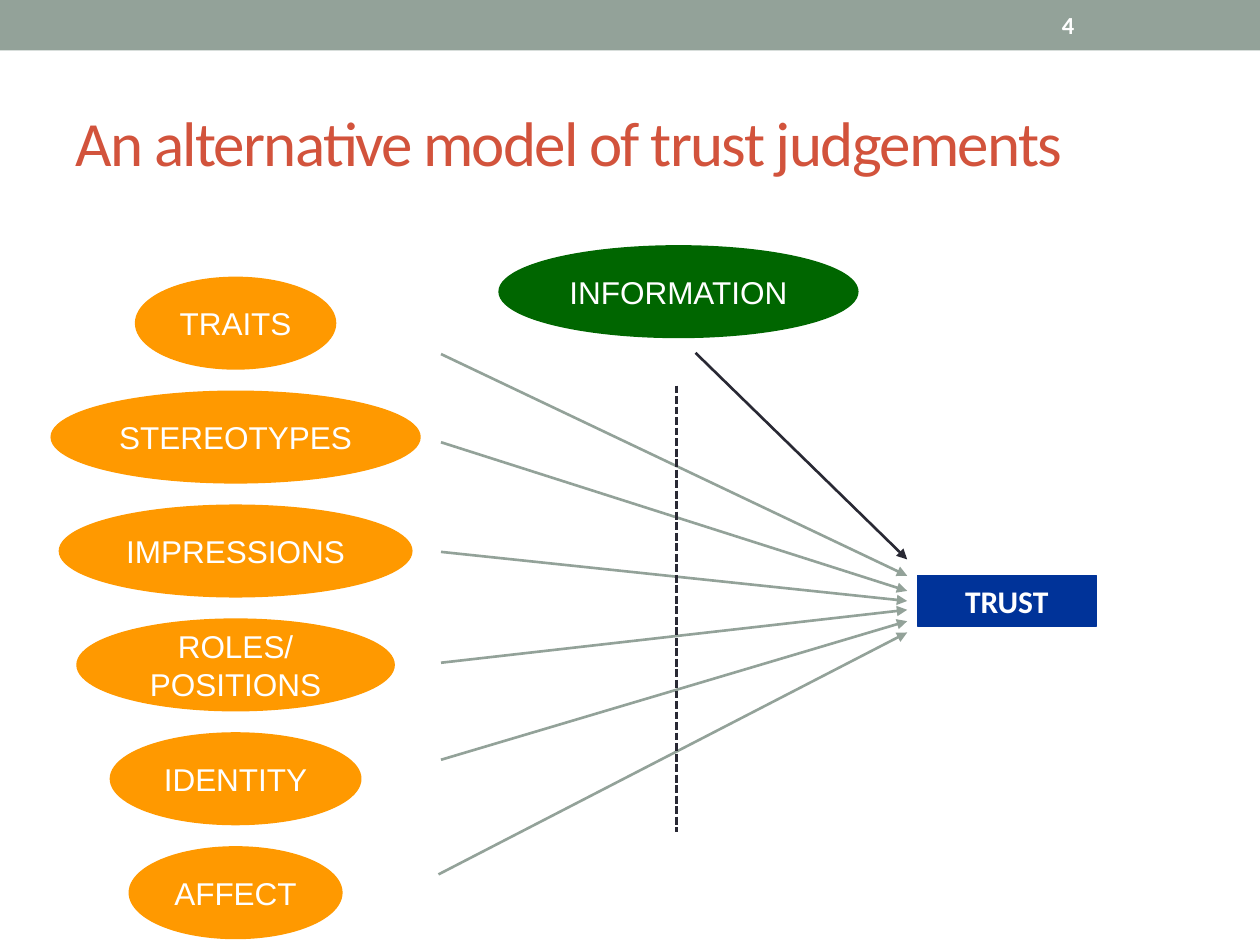
from pptx import Presentation, util as u
from pptx.dml.color import RGBColor
from pptx.enum import dml, shapes, text
from pptx.oxml.ns import qn
from lxml import etree

COLORS = {"band": "93A299", "title": "D2533C", "dark": "292934", "trust": "003399",
          "information": "006600", "factor": "FF9900", "white": "FFFFFF"}
COLUMNS, ROWS = 100, 75

presentation = Presentation()
presentation.slide_width, presentation.slide_height = u.Inches(10), u.Inches(7.5)
column = presentation.slide_width / COLUMNS
row = presentation.slide_height / ROWS
slide = presentation.slides.add_slide(presentation.slide_layouts[5])


def add_node(kind, left, top, width, height, color, label="", font="Arial", bold=False, line_width=2.08):
    shape = slide.shapes.add_shape(kind, int(left * column), int(top * row),
                                   int(width * column), int(height * row))
    shape.shadow.inherit = False
    shape.fill.solid()
    shape.fill.fore_color.rgb = RGBColor.from_string(COLORS[color])
    shape.line.color.rgb = RGBColor.from_string(COLORS[color])
    shape.line.width = u.Pt(line_width)
    frame = shape.text_frame
    frame.text = label
    frame.word_wrap = False
    frame.vertical_anchor = text.MSO_ANCHOR.MIDDLE
    for paragraph in frame.paragraphs:
        paragraph.alignment = text.PP_ALIGN.CENTER
        paragraph.font.name, paragraph.font.size, paragraph.font.bold = font, u.Pt(18), bold
        paragraph.font.color.rgb = RGBColor.from_string(COLORS["white"])
    return shape


def add_line(start, end, color, arrow=True):
    connector = slide.shapes.add_connector(
        shapes.MSO_CONNECTOR.STRAIGHT, int(start[0] * column), int(start[1] * row),
        int(end[0] * column), int(end[1] * row))
    connector.line.color.rgb = RGBColor.from_string(COLORS[color])
    connector.line.width = u.Pt(1.5)
    if arrow:
        etree.SubElement(connector.line._get_or_add_ln(), qn("a:tailEnd"), type="triangle")
    etree.SubElement(connector._element.spPr, qn("a:effectLst"))
    return connector


band = add_node(shapes.MSO_SHAPE.RECTANGLE, 0, 0, COLUMNS, 4, "band")
band.line.fill.background()

title = slide.shapes.title
title.left, title.top = int(5 * column), int(5.8 * row)
title.width, title.height = int(90 * column), int(10.8 * row)
title.text_frame.text = "An alternative model of trust judgements"
title.text_frame.vertical_anchor = text.MSO_ANCHOR.MIDDLE
paragraph = title.text_frame.paragraphs[0]
paragraph.alignment = text.PP_ALIGN.LEFT
run = paragraph.runs[0]
run.font.name, run.font.size = "Calibri", u.Pt(36)
run.font.color.rgb = RGBColor.from_string(COLORS["title"])
run.font._element.set("spc", "-100")

number = slide.shapes.add_textbox(int(83.3 * column), int(0.2 * row), int(11.7 * column), int(3.6 * row))
number.text_frame.text = "4"
number.text_frame.word_wrap = True
number.text_frame.vertical_anchor = text.MSO_ANCHOR.MIDDLE
run = number.text_frame.paragraphs[0].runs[0]
run.font.name, run.font.size, run.font.bold = "Calibri", u.Pt(14), True
run.font.color.rgb = RGBColor.from_string(COLORS["white"])

add_node(shapes.MSO_SHAPE.RECTANGLE, 72.8, 45.7, 14.2, 4, "trust", "TRUST", "Calibri", True, 0.75)
add_node(shapes.MSO_SHAPE.OVAL, 39.7, 19.6, 28.3, 7.1, "information", "INFORMATION")

factors = [
    ("TRAITS", 15.7, (35, 28.1), 45.7),
    ("STEREOTYPES", 29.1, (35, 35.1), 46.9),
    ("IMPRESSIONS", 27.8, (35, 43.8), 47.7),
    ("ROLES/\nPOSITIONS", 25, (35, 52.6), 48.4),
    ("IDENTITY", 19.7, (35, 60.3), 49.3),
    ("AFFECT", 16.7, (34.8, 69.4), 50.2),
]
for index, (label, width, start, end_row) in enumerate(factors):
    add_node(shapes.MSO_SHAPE.OVAL, 18.7 - width / 2, 22.1 + 9.04 * index, width, 7.1, "factor", label)
    add_line(start, (72, end_row), "band")

divider = add_line((53.7, 30.6), (53.7, 66), "dark", arrow=False)
divider.line.dash_style = dml.MSO_LINE.SQUARE_DOT
add_line((55.2, 28), (72, 44.4), "dark")

presentation.save("out.pptx")
